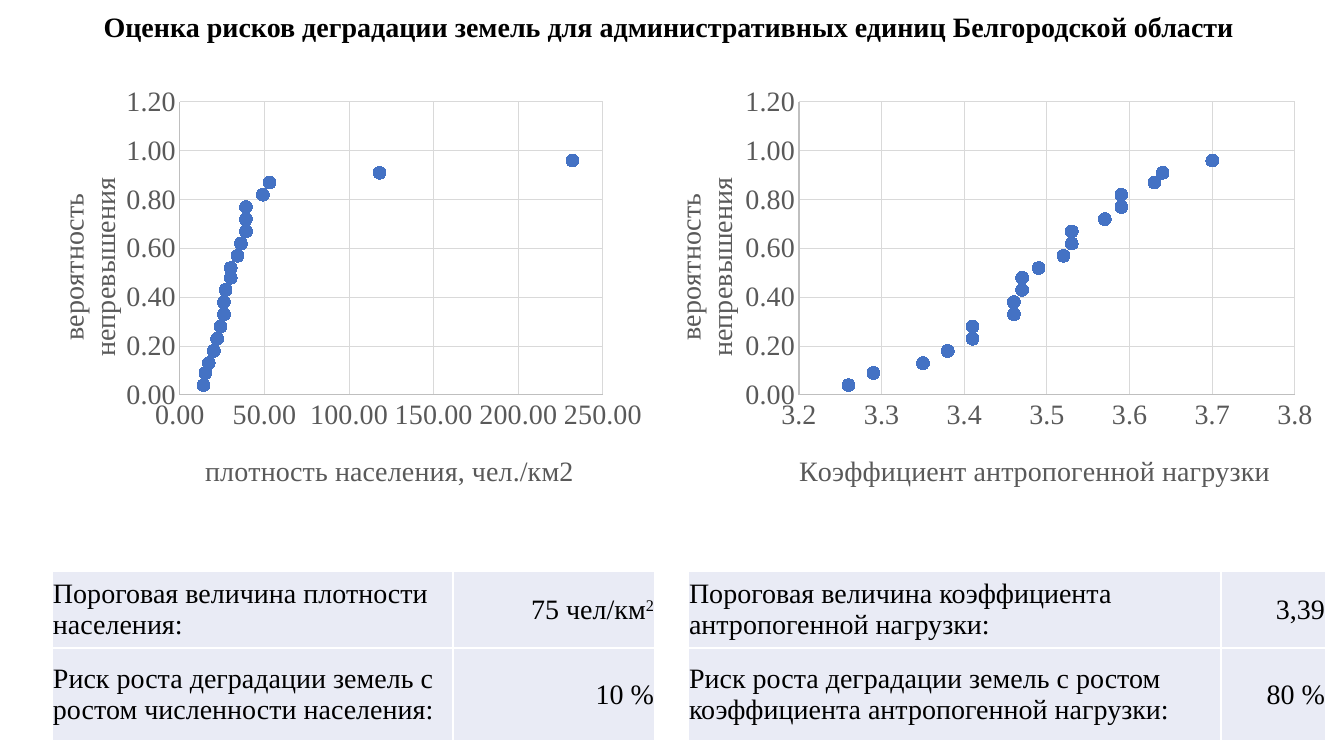
from dataclasses import dataclass

import lxml.etree
import pptx
import pptx.chart.data
import pptx.dml.color
import pptx.enum.chart
import pptx.enum.text
import pptx.oxml
import pptx.oxml.ns
import pptx.util

PIXELS_PER_INCH = 100.8
FONT_NAME = "Times New Roman"
FONT_SIZE = pptx.util.Pt(20)
COLORS = {
    "text": "000000",
    "axis_text": "595959",
    "axis_line": "BFBFBF",
    "grid": "D9D9D9",
    "marker": "4472C4",
    "cell": "E9EBF5",
    "border": "FFFFFF",
}
CHART_TOP, CHART_HEIGHT = 79, 426
PLOT_TOP, PLOT_HEIGHT = 102, 293
TABLE_TOP, ROW_HEIGHTS = 571, (77, 93)


@dataclass
class RiskChart:
    left: int
    width: int
    plot_left: int
    plot_width: int
    title: str
    title_left: int
    probability_left: int
    minimum: float
    maximum: float
    step: float
    number_format: str
    values: list[float]


@dataclass
class RiskTable:
    left: int
    column_widths: tuple[int, int]
    rows: list[tuple[str, str, str]]


CHARTS = [
    RiskChart(17, 638, 180, 423, "плотность населения, чел./км2", 200, 50, 0, 250, 50, "0.00",
              [14, 15, 17, 20, 22, 24, 26, 26, 27, 30, 30, 34, 36, 39, 39, 39, 49, 53, 118, 232]),
    RiskChart(634, 694, 799, 496, "Коэффициент антропогенной нагрузки", 794, 667, 3.2, 3.8, 0.1, "0.0",
              [3.26, 3.29, 3.35, 3.38, 3.41, 3.41, 3.46, 3.46, 3.47, 3.47,
               3.49, 3.52, 3.53, 3.53, 3.57, 3.59, 3.59, 3.63, 3.64, 3.7]),
]
TABLES = [
    RiskTable(52, (401, 202), [
        ("Пороговая величина плотности населения:", "75 чел/км", "2"),
        ("Риск роста деградации земель с ростом численности населения:", "10 %", ""),
    ]),
    RiskTable(688, (533, 105), [
        ("Пороговая величина коэффициента антропогенной нагрузки:", "3,39", ""),
        ("Риск роста деградации земель с ростом коэффициента антропогенной нагрузки:", "80 %", ""),
    ]),
]


def px(length: int) -> int:
    return pptx.util.Inches(length / PIXELS_PER_INCH)


def color(name: str) -> pptx.dml.color.RGBColor:
    return pptx.dml.color.RGBColor.from_string(COLORS[name])


def style_font(font, color_name: str, bold: bool = False) -> None:
    font.name, font.size, font.bold = FONT_NAME, FONT_SIZE, bold
    font.color.rgb = color(color_name)


def style_line(line, color_name: str) -> None:
    line.color.rgb = color(color_name)
    line.width = pptx.util.Pt(0.75)


def set_layout(element, index: int, settings: dict) -> None:
    for layout in element.findall(pptx.oxml.ns.qn("c:layout")):
        element.remove(layout)
    layout = lxml.etree.Element(pptx.oxml.ns.qn("c:layout"))
    manual = lxml.etree.SubElement(layout, pptx.oxml.ns.qn("c:manualLayout"))
    for tag, value in settings.items():
        lxml.etree.SubElement(manual, pptx.oxml.ns.qn(f"c:{tag}")).set("val", str(value))
    element.insert(index, layout)


def style_axis(axis, title: str, minimum: float, maximum: float, step: float,
               number_format: str, position: tuple[float, float]) -> None:
    axis.minimum_scale, axis.maximum_scale, axis.major_unit = minimum, maximum, step
    axis.major_tick_mark = axis.minor_tick_mark = pptx.enum.chart.XL_TICK_MARK.NONE
    axis.tick_labels.number_format = number_format
    axis.tick_labels.number_format_is_linked = False
    style_font(axis.tick_labels.font, "axis_text")
    style_line(axis.format.line, "axis_line")
    axis.has_major_gridlines = True
    style_line(axis.major_gridlines.format.line, "grid")
    text_frame = axis.axis_title.text_frame
    text_frame.text = title
    for paragraph in text_frame.paragraphs:
        style_font(paragraph.runs[0].font, "axis_text")
    set_layout(axis.axis_title._element, 1,
               {"xMode": "edge", "yMode": "edge", "x": position[0], "y": position[1]})


def add_risk_chart(slide, risk: RiskChart) -> None:
    data = pptx.chart.data.XyChartData()
    points = data.add_series("Series 1")
    for rank, value in enumerate(risk.values, 1):
        points.add_data_point(value, round((rank - 0.25) / (len(risk.values) + 0.5), 2))
    chart = slide.shapes.add_chart(
        pptx.enum.chart.XL_CHART_TYPE.XY_SCATTER, px(risk.left), px(CHART_TOP),
        px(risk.width), px(CHART_HEIGHT), data).chart
    chart.has_legend = chart.has_title = False
    style_font(chart.font, "text")

    def fraction(left: int, top: int) -> tuple[float, float]:
        return (left - risk.left) / risk.width, (top - CHART_TOP) / CHART_HEIGHT

    style_axis(chart.category_axis, risk.title, risk.minimum, risk.maximum, risk.step,
               risk.number_format, fraction(risk.title_left, 448))
    style_axis(chart.value_axis, "вероятность непревышения", 0, 1.2, 0.2,
               "0.00", fraction(risk.probability_left, 172))
    plot = chart.plots[0]
    plot.vary_by_categories = False
    plot_x, plot_y = fraction(risk.plot_left, PLOT_TOP)
    set_layout(chart._chartSpace.chart.plotArea, 0, {
        "layoutTarget": "inner", "xMode": "edge", "yMode": "edge", "x": plot_x, "y": plot_y,
        "w": risk.plot_width / risk.width, "h": PLOT_HEIGHT / CHART_HEIGHT})
    series = plot.series[0]
    series.smooth = False
    series.format.line.fill.background()
    series.marker.style = pptx.enum.chart.XL_MARKER_STYLE.CIRCLE
    series.marker.size = 9
    series.marker.format.fill.solid()
    series.marker.format.fill.fore_color.rgb = color("marker")
    style_line(series.marker.format.line, "marker")


def fill_cell(cell, text: str, superscript: str, is_value: bool) -> None:
    cell.margin_left = cell.margin_right = px(1)
    cell.margin_top, cell.margin_bottom = (px(1), 0) if is_value else (px(2), px(2))
    cell.vertical_anchor = pptx.enum.text.MSO_ANCHOR.MIDDLE
    paragraph = cell.text_frame.paragraphs[0]
    paragraph.text = text
    alignment = pptx.enum.text.PP_ALIGN
    paragraph.alignment = alignment.RIGHT if is_value else alignment.LEFT
    if superscript:
        run = paragraph.add_run()
        run.text = superscript
        run.font._element.set("baseline", "30000")
    for run in paragraph.runs:
        style_font(run.font, "text")
    properties = cell._tc.get_or_add_tcPr()
    for side in ("lnL", "lnR", "lnT", "lnB"):
        properties.append(pptx.oxml.parse_xml(
            f'<a:{side} {pptx.oxml.ns.nsdecls("a")} w="12700"><a:solidFill>'
            f'<a:srgbClr val="{COLORS["border"]}"/></a:solidFill></a:{side}>'))
    cell.fill.solid()
    cell.fill.fore_color.rgb = color("cell")


def add_risk_table(slide, risk: RiskTable) -> None:
    table = slide.shapes.add_table(
        len(risk.rows), 2, px(risk.left), px(TABLE_TOP),
        px(sum(risk.column_widths)), px(sum(ROW_HEIGHTS))).table
    table.first_row = table.horz_banding = False
    for column, width in zip(table.columns, risk.column_widths):
        column.width = px(width)
    for index, (label, value, superscript) in enumerate(risk.rows):
        table.rows[index].height = px(ROW_HEIGHTS[index])
        fill_cell(table.cell(index, 0), label, "", False)
        fill_cell(table.cell(index, 1), value, superscript, True)


def add_heading(slide) -> None:
    text_frame = slide.shapes.add_textbox(px(17), px(5), px(1304), px(44)).text_frame
    text_frame.word_wrap = True
    text_frame.auto_size = pptx.enum.text.MSO_AUTO_SIZE.SHAPE_TO_FIT_TEXT
    text_frame.text = "Оценка рисков деградации земель для административных единиц Белгородской области"
    paragraph = text_frame.paragraphs[0]
    paragraph.alignment = pptx.enum.text.PP_ALIGN.CENTER
    style_font(paragraph.runs[0].font, "text", bold=True)


def main() -> None:
    presentation = pptx.Presentation()
    presentation.slide_width, presentation.slide_height = px(1344), px(756)
    slide = presentation.slides.add_slide(presentation.slide_layouts[6])
    add_heading(slide)
    for risk_chart in CHARTS:
        add_risk_chart(slide, risk_chart)
    for risk_table in TABLES:
        add_risk_table(slide, risk_table)
    presentation.save("out.pptx")


if __name__ == "__main__":
    main()
